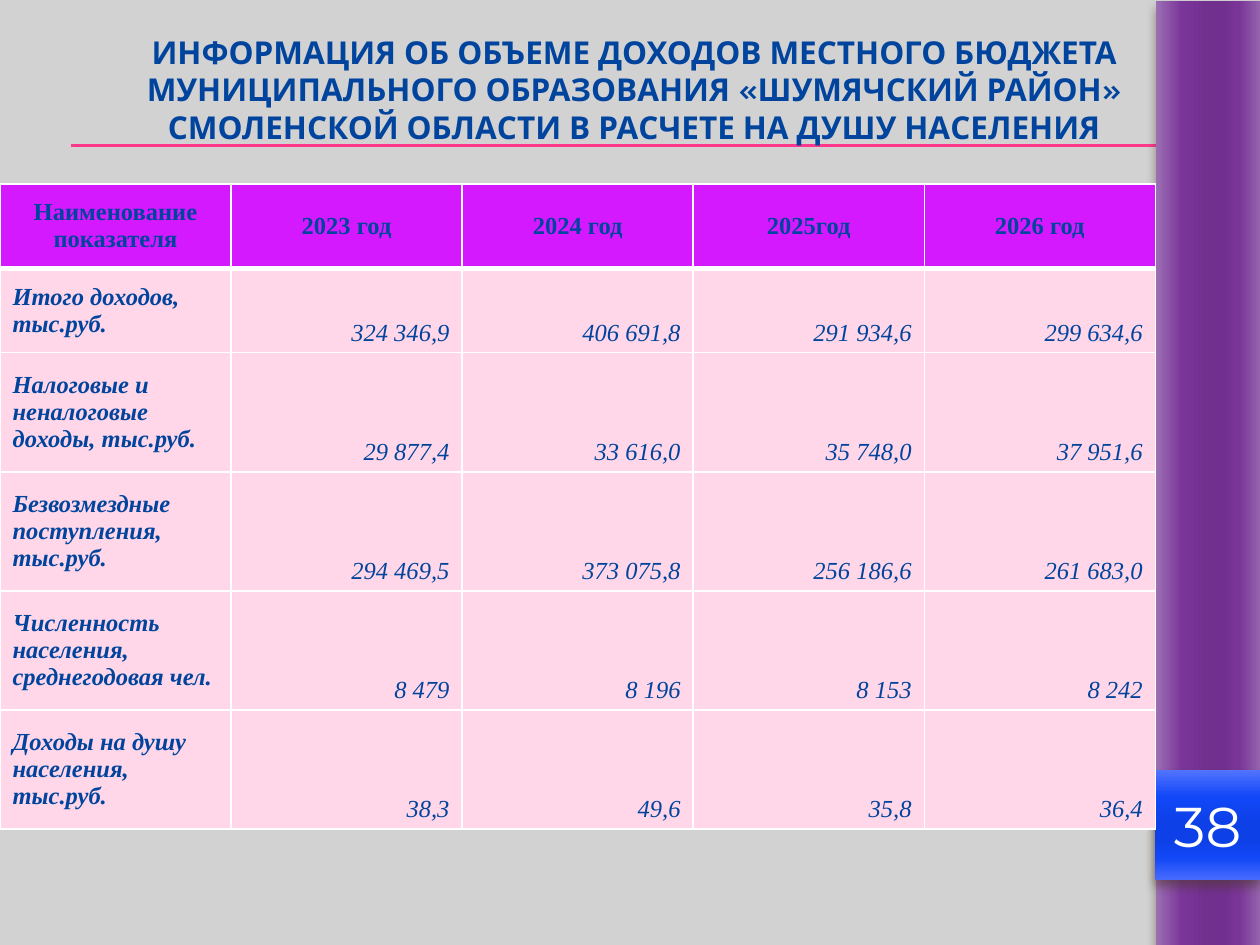
from dataclasses import dataclass

from lxml import etree
from pptx import Presentation
from pptx.dml.color import RGBColor as RGB
from pptx.enum.shapes import MSO_CONNECTOR as CONN, MSO_SHAPE as SHAPE
from pptx.enum.text import MSO_ANCHOR as ANCHOR, MSO_AUTO_SIZE as AUTO, PP_ALIGN as ALIGN
from pptx.oxml import parse_xml
from pptx.oxml.ns import nsdecls, qn
from pptx.util import Inches, Pt


@dataclass(frozen=True)
class Theme:
    background: str = "D2D2D2"
    ink: str = "00449E"
    title_outline: str = "4E005F"
    rule: str = "FF388C"
    white: str = "FFFFFF"
    header: str = "D519FF"
    body: str = "FFD7E8"
    shadow: str = "4E3B30"
    ribbon: tuple = ((0, "9C6FB3"), (25, "7A3599"), (50, "71308E"),
                     (65, "71308E"), (80, "7A3598"), (100, "9566AD"))
    badge: tuple = ((0, "5374FF"), (25, "1147F8"), (50, "0E40E7"),
                    (65, "0E40E7"), (80, "1147F6"), (100, "476AFD"))
    title_font: str = "Karla"
    badge_font: str = "Montserrat"
    table_font: str = "Times New Roman"
    title_size: int = 18
    badge_size: int = 32
    table_size: int = 14


THEME = Theme()

TITLE = ("ИНФОРМАЦИЯ ОБ ОБЪЕМЕ ДОХОДОВ МЕСТНОГО БЮДЖЕТА "
         "МУНИЦИПАЛЬНОГО ОБРАЗОВАНИЯ «ШУМЯЧСКИЙ РАЙОН» "
         "СМОЛЕНСКОЙ ОБЛАСТИ В РАСЧЕТЕ НА ДУШУ НАСЕЛЕНИЯ")
ROWS = (
    ("Наименование показателя", "2023 год", "2024 год", "2025год", "2026 год"),
    ("Итого доходов, тыс.руб.", "324 346,9", "406 691,8", "291 934,6", "299 634,6"),
    ("Налоговые и неналоговые доходы, тыс.руб.",
     "29 877,4", "33 616,0", "35 748,0", "37 951,6"),
    ("Безвозмездные поступления, тыс.руб.",
     "294 469,5", "373 075,8", "256 186,6", "261 683,0"),
    ("Численность населения, среднегодовая чел.", "8 479", "8 196", "8 153", "8 242"),
    ("Доходы на душу населения, тыс.руб.", "38,3", "49,6", "35,8", "36,4"),
)


def write(tf, text, font, size, color, align, bold=False, italic=False):
    p = tf.paragraphs[0]
    p.text = text
    p.alignment = align
    r = p.runs[0]
    r.font.name, r.font.size = font, Pt(size)
    r.font.bold, r.font.italic = bold, italic
    r.font.color.rgb = RGB.from_string(color)
    return r


def solid(color):
    return f'<a:solidFill><a:srgbClr val="{color}"/></a:solidFill>'


def add_rule(slide, y):
    line = slide.shapes.add_connector(
        CONN.STRAIGHT, Inches(0.56), Inches(y), Inches(10), Inches(y))
    line.line.color.rgb = RGB.from_string(THEME.rule)
    line.line.width = Pt(0.75)
    etree.SubElement(line._element.spPr, qn("a:effectLst"))


def add_gradient_panel(slide, left, top, width, height, stops, rotation=0):
    sp = slide.shapes.add_shape(
        SHAPE.RECTANGLE, Inches(left), Inches(top), Inches(width), Inches(height))
    sp.rotation = rotation
    sp.line.fill.background()
    # Multi-stop vertical gradient, placed right after the geometry
    stop_xml = "".join(f'<a:gs pos="{pos * 1000}"><a:srgbClr val="{color}"/></a:gs>'
                       for pos, color in stops)
    sp._element.spPr.find(qn("a:prstGeom")).addnext(parse_xml(
        f'<a:gradFill {nsdecls("a")} rotWithShape="1"><a:gsLst>{stop_xml}</a:gsLst>'
        '<a:lin ang="5400000" scaled="0"/></a:gradFill>'))
    # Soft shadow below
    sp._element.spPr.append(parse_xml(
        f'<a:effectLst {nsdecls("a")}><a:outerShdw blurRad="{Pt(6)}" dist="{Pt(4)}" '
        f'dir="5400000" rotWithShape="0"><a:srgbClr val="{THEME.shadow}">'
        '<a:alpha val="60000"/></a:srgbClr></a:outerShdw></a:effectLst>'))
    return sp


def add_title(slide):
    box = slide.shapes.add_textbox(Inches(0.98), Inches(0.21), Inches(8.11), Inches(1.01))
    tf = box.text_frame
    tf.word_wrap = True
    tf.auto_size = AUTO.SHAPE_TO_FIT_TEXT
    r = write(tf, TITLE, THEME.title_font, THEME.title_size, THEME.ink,
              ALIGN.CENTER, bold=True)
    r.font._element.insert(0, parse_xml(
        f'<a:ln {nsdecls("a")} w="{Pt(0.75)}">{solid(THEME.title_outline)}</a:ln>'))


def set_borders(cell, top=1, bottom=1):
    tc_pr = cell._tc.get_or_add_tcPr()
    sides = (("lnL", 1), ("lnR", 1), ("lnT", top), ("lnB", bottom))
    for i, (side, width) in enumerate(sides):
        tc_pr.insert(i, parse_xml(
            f'<a:{side} {nsdecls("a")} w="{Pt(width)}">{solid(THEME.white)}</a:{side}>'))


def add_income_table(slide):
    width, height, short_row = 9.17, 5.12, 0.67
    tall_row = (height - 2 * short_row) / (len(ROWS) - 2)
    table = slide.shapes.add_table(
        len(ROWS), len(ROWS[0]), Inches(0), Inches(1.46),
        Inches(width), Inches(height)).table
    for col in table.columns:
        col.width = Inches(width / len(ROWS[0]))
    for i, values in enumerate(ROWS):
        table.rows[i].height = Inches(short_row if i < 2 else tall_row)
        for j, value in enumerate(values):
            header, label = i == 0, j == 0
            cell = table.cell(i, j)
            cell.fill.solid()
            cell.fill.fore_color.rgb = RGB.from_string(
                THEME.header if header else THEME.body)
            cell.vertical_anchor = ANCHOR.MIDDLE if header or label else ANCHOR.BOTTOM
            align = ALIGN.CENTER if header else ALIGN.LEFT if label else ALIGN.RIGHT
            write(cell.text_frame, value, THEME.table_font, THEME.table_size,
                  THEME.ink, align, bold=header or label, italic=not header)
            set_borders(cell, top=3 if i == 1 else 1, bottom=3 if header else 1)


def main():
    prs = Presentation()
    prs.slide_width, prs.slide_height = Inches(10), Inches(7.5)
    slide = prs.slides.add_slide(prs.slide_layouts[6])
    slide.background.fill.solid()
    slide.background.fill.fore_color.rgb = RGB.from_string(THEME.background)

    # Double rule under the title
    for y in (1.15, 1.16):
        add_rule(slide, y)

    # Side ribbon and page number
    add_gradient_panel(slide, 5.84, 3.34, 7.5, 0.83, THEME.ribbon, rotation=270)
    badge = add_gradient_panel(slide, 9.17, 6.11, 0.83, 0.87, THEME.badge)
    badge.text_frame.vertical_anchor = ANCHOR.MIDDLE
    write(badge.text_frame, "38", THEME.badge_font, THEME.badge_size,
          THEME.white, ALIGN.CENTER)

    # Content
    add_title(slide)
    add_income_table(slide)
    prs.save("out.pptx")


if __name__ == "__main__":
    main()
